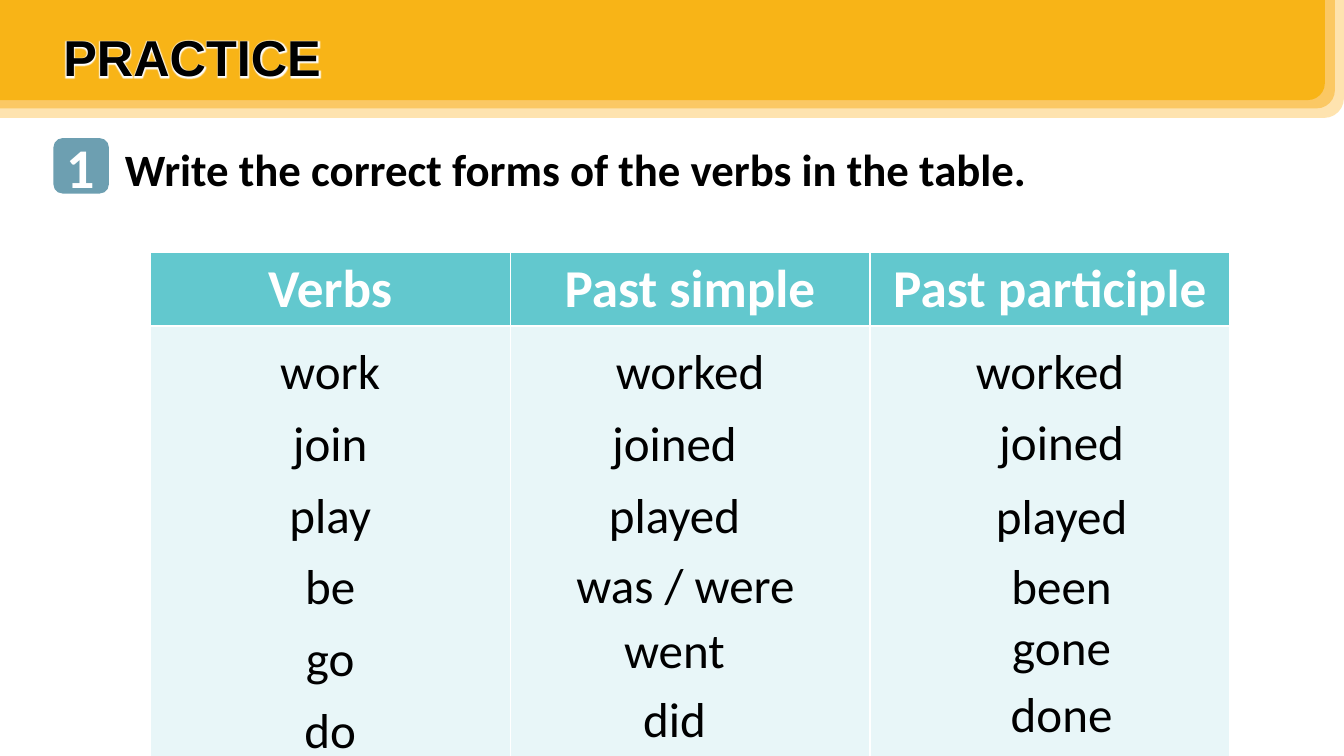
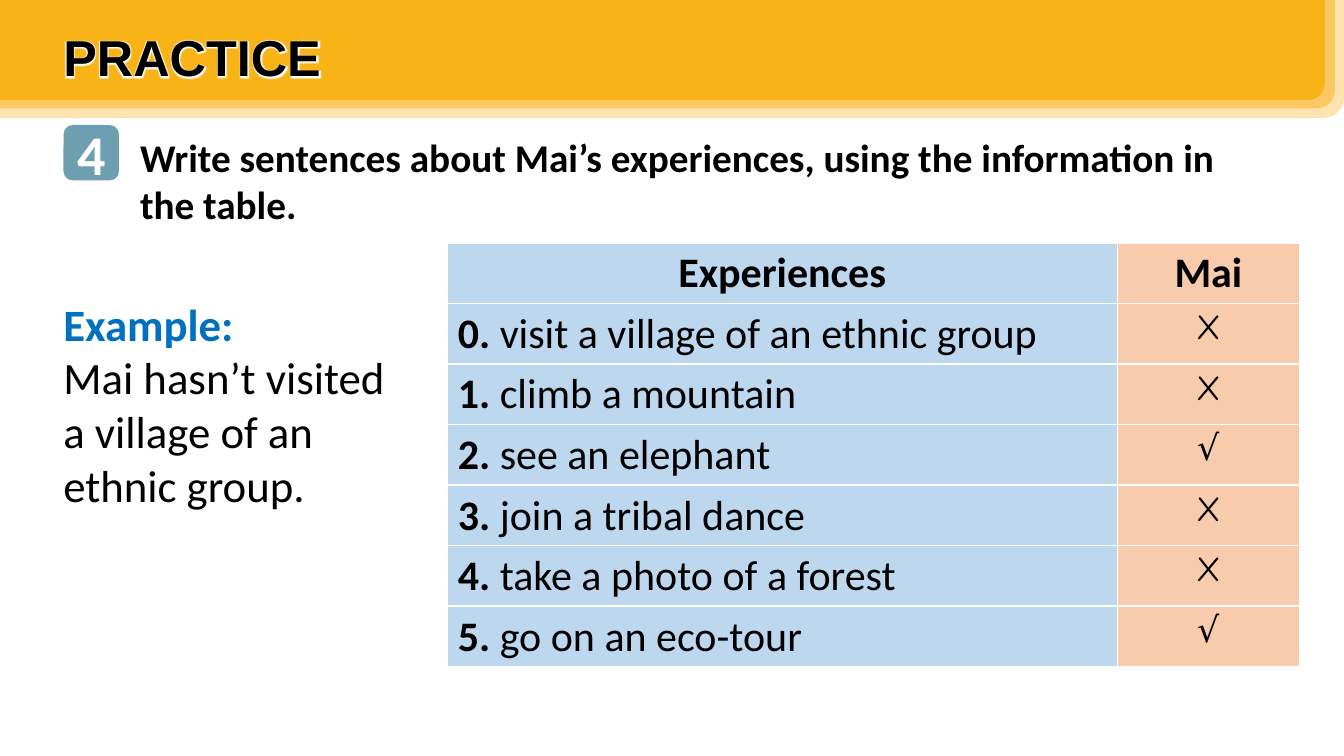
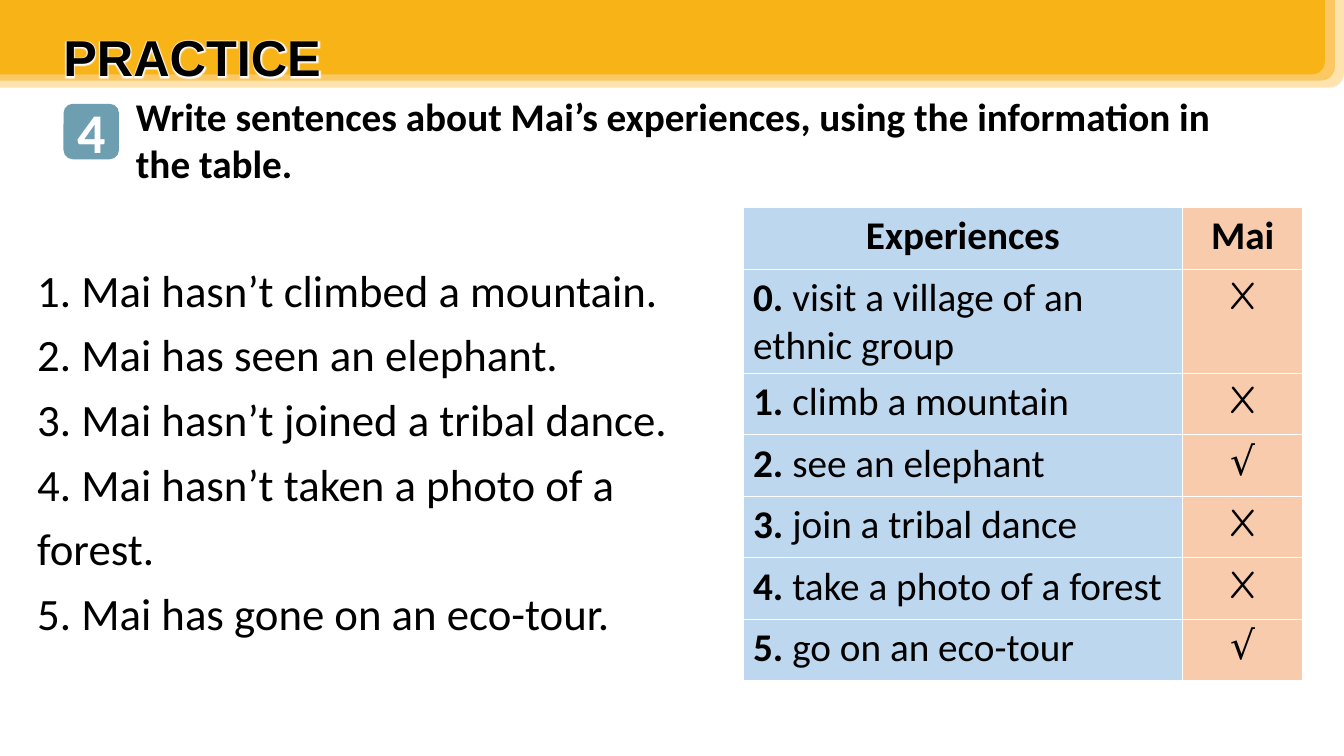
import pptx
import pptx.dml.color
import pptx.enum.shapes
import pptx.enum.text
import pptx.oxml
import pptx.oxml.ns
import pptx.util

Inches = pptx.util.Inches
Pt = pptx.util.Pt
RGBColor = pptx.dml.color.RGBColor
SHAPE = pptx.enum.shapes.MSO_SHAPE
ANCHOR = pptx.enum.text.MSO_ANCHOR
LEFT = pptx.enum.text.PP_ALIGN.LEFT
CENTER = pptx.enum.text.PP_ALIGN.CENTER
qn = pptx.oxml.ns.qn

BLACK = RGBColor(0x00, 0x00, 0x00)
WHITE = RGBColor(0xFF, 0xFF, 0xFF)
CREAM = RGBColor(0xFE, 0xE3, 0xAF)
APRICOT = RGBColor(0xFB, 0xC8, 0x64)
AMBER = RGBColor(0xF8, 0xB4, 0x17)
SLATE = RGBColor(0x6D, 0x9F, 0xB1)
TEAL = RGBColor(0x62, 0xC8, 0xCE)
ICE = RGBColor(0xE8, 0xF6, 0xF8)
BLUE = RGBColor(0x00, 0x70, 0xC0)
SKY = RGBColor(0xBD, 0xD7, 0xEE)
PEACH = RGBColor(0xF8, 0xCB, 0xAD)

GLOW = (
    '<a:effectLst %s><a:glow rad="50800"><a:srgbClr val="FFFFFF"/></a:glow></a:effectLst>'
    % pptx.oxml.ns.nsdecls("a")
)
EXPERIENCE_TASK = "Write sentences about Mai’s experiences, using the information in the table."
EXPERIENCES = [
    ("visit a village of an ethnic group", "X"),
    ("climb a mountain", "X"),
    ("see an elephant", "√"),
    ("join a tribal dance", "X"),
    ("take a photo of a forest", "X"),
    ("go on an eco-tour", "√"),
]
VERBS = ["work", "join", "play", "be", "go", "do"]
# word, centre, top
ANSWERS = [
    ("joined", 6.69, 4.04), ("joined", 10.53, 4.03),
    ("played", 6.69, 4.76), ("played", 10.53, 4.77),
    ("was / were", 6.8, 5.45), ("been", 10.53, 5.46),
    ("went", 6.69, 6.1), ("gone", 10.53, 6.07),
    ("did", 6.69, 6.78), ("done", 10.53, 6.73),
]
ANSWER_WIDTH = 2.6


def add_run(p, text, size, color=BLACK, bold=False, name="Calibri"):
    r = p.add_run()
    r.text = text
    for key, value in {"size": Pt(size), "bold": bold, "name": name}.items():
        setattr(r.font, key, value)
    r.font.color.rgb = color
    return r


def write(tf, paragraphs, align=LEFT, spacing=None):
    """Fill a frame; each paragraph is a list of (text, run format) pairs."""
    for i, runs in enumerate(paragraphs):
        p = tf.add_paragraph() if i else tf.paragraphs[0]
        p.alignment = align
        if spacing:
            p.line_spacing = spacing
        for text, fmt in runs:
            add_run(p, text, **fmt)


def add_text(slide, box, paragraphs, **layout):
    tf = slide.shapes.add_textbox(*map(Inches, box)).text_frame
    tf.word_wrap = True
    write(tf, paragraphs, **layout)
    return tf


def add_filled(shapes, kind, box, color):
    sp = shapes.add_shape(kind, *map(Inches, box))
    sp.shadow.inherit = False
    sp.fill.solid()
    sp.fill.fore_color.rgb = color
    sp.line.fill.background()
    return sp


def add_band(slide, height):
    group = slide.shapes.add_group_shape()
    layers = [(13.33, 1, CREAM), (13.24, 0.92, APRICOT), (13.14, 0.85, AMBER)]
    for width, share, color in layers:
        sp = add_filled(group.shapes, SHAPE.ROUND_1_RECTANGLE,
                        (0, -0.01, width, height * share), color)
        sp.element.spPr.find(qn("a:xfrm")).set("flipV", "1")


def add_title(slide):
    tf = add_text(slide, (0.53, 0.21, 4.52, 0.71),
                  [[("PRACTICE", dict(size=36, bold=True, name="Arial"))]])
    fill = tf.paragraphs[0].runs[0].font.fill
    fill.solid()
    fill.fore_color.rgb = BLACK
    rPr = tf.paragraphs[0].runs[0].font._element
    rPr.find(qn("a:solidFill")).addnext(pptx.oxml.parse_xml(GLOW))


def add_badge(slide, number, left, top):
    sp = add_filled(slide.shapes, SHAPE.ROUNDED_RECTANGLE, (left, top, 0.55, 0.55), SLATE)
    tf = sp.text_frame
    for side in ("left", "top", "right", "bottom"):
        setattr(tf, f"margin_{side}", 0)
    tf.vertical_anchor = ANCHOR.MIDDLE
    write(tf, [[(number, dict(size=40, color=WHITE, bold=True))]], align=CENTER)


def add_practice_slide(prs, band, number, badge, task, task_box, task_size):
    slide = prs.slides.add_slide(prs.slide_layouts[6])
    add_band(slide, band)
    add_text(slide, task_box, [[(task, dict(size=task_size, bold=True))]])
    add_title(slide)
    add_badge(slide, number, *badge)
    return slide


def add_table(slide, left, top, widths, heights):
    box = (left, top, sum(widths), sum(heights))
    table = slide.shapes.add_table(len(heights), len(widths), *map(Inches, box)).table
    table.horz_banding = False
    for column, width in zip(table.columns, widths):
        column.width = Inches(width)
    for row, height in zip(table.rows, heights):
        row.height = Inches(height)
    return table


def fill_cell(cell, color, paragraphs, **layout):
    cell.fill.solid()
    cell.fill.fore_color.rgb = color
    write(cell.text_frame, paragraphs, **layout)


def add_verb_table(slide):
    table = add_table(slide, 1.49, 2.5, [3.57] * 3, [0.72, 4.27])
    columns = [("Verbs", VERBS), ("Past simple", ["worked"]), ("Past participle", ["worked"])]
    for c, (heading, words) in enumerate(columns):
        head = table.cell(0, c)
        head.vertical_anchor = ANCHOR.MIDDLE
        fill_cell(head, TEAL, [[(heading, dict(size=38, color=WHITE, bold=True))]], align=CENTER)
        fill_cell(table.cell(1, c), ICE, [[(word, dict(size=35))] for word in words],
                  align=CENTER, spacing=1.2)


def add_experience_table(slide, left, top, widths, heights, size, mark_size):
    table = add_table(slide, left, top, widths, heights)
    strong = dict(size=size, bold=True)
    for c, (heading, color) in enumerate([("Experiences", SKY), ("Mai", PEACH)]):
        fill_cell(table.cell(0, c), color, [[(heading, strong)]], align=CENTER)
    for i, (activity, mark) in enumerate(EXPERIENCES):
        fill_cell(table.cell(i + 1, 0), SKY,
                  [[(f"{i}. ", strong), (activity, dict(size=size))]])
        fill_cell(table.cell(i + 1, 1), PEACH,
                  [[(mark, dict(size=mark_size, name="Comic Neue"))]], align=CENTER)


def build_verbs(prs):
    slide = add_practice_slide(prs, 1.18, "1", (0.53, 1.37),
                               "Write the correct forms of the verbs in the table.",
                               (1.14, 1.36, 9.42, 0.64), 32)
    add_verb_table(slide)
    for word, centre, top in ANSWERS:
        add_text(slide, (centre - ANSWER_WIDTH / 2, top, ANSWER_WIDTH, 0.69),
                 [[(word, dict(size=35))]], align=CENTER)


def build_example(prs):
    slide = add_practice_slide(prs, 1.18, "4", (0.63, 1.24), EXPERIENCE_TASK,
                               (1.29, 1.27, 11.31, 1.04), 28)
    add_text(slide, (0.53, 2.89, 3.47, 2.26), [
        [("Example:", dict(size=32, color=BLUE, bold=True))],
        [("Mai hasn’t visited a village of an ethnic group.", dict(size=32))],
    ])
    add_experience_table(slide, 4.44, 2.41, [6.64, 1.81], [0.6] * 7, 30, 25)


def build_answers(prs):
    slide = add_practice_slide(prs, 0.88, "4", (0.63, 1.03), EXPERIENCE_TASK,
                               (1.25, 0.87, 11.31, 1.04), 28)
    sentences = [
        "1. Mai hasn’t climbed a mountain.",
        "2. Mai has seen an elephant.",
        "3. Mai hasn’t joined a tribal dance.",
        "4. Mai hasn’t taken a photo of a forest.",
        "5. Mai has gone on an eco-tour.",
    ]
    add_text(slide, (0.27, 2.45, 6.98, 3.94),
             [[(sentence, dict(size=32))] for sentence in sentences], spacing=1.2)
    add_experience_table(slide, 7.37, 2.06, [4.36, 1.19], [0.61, 1.02] + [0.61] * 5, 28, 28)


def main():
    prs = pptx.Presentation()
    prs.slide_width, prs.slide_height = Inches(13.33), Inches(7.5)
    build_verbs(prs)
    build_example(prs)
    build_answers(prs)
    prs.save("out.pptx")


if __name__ == "__main__":
    main()
